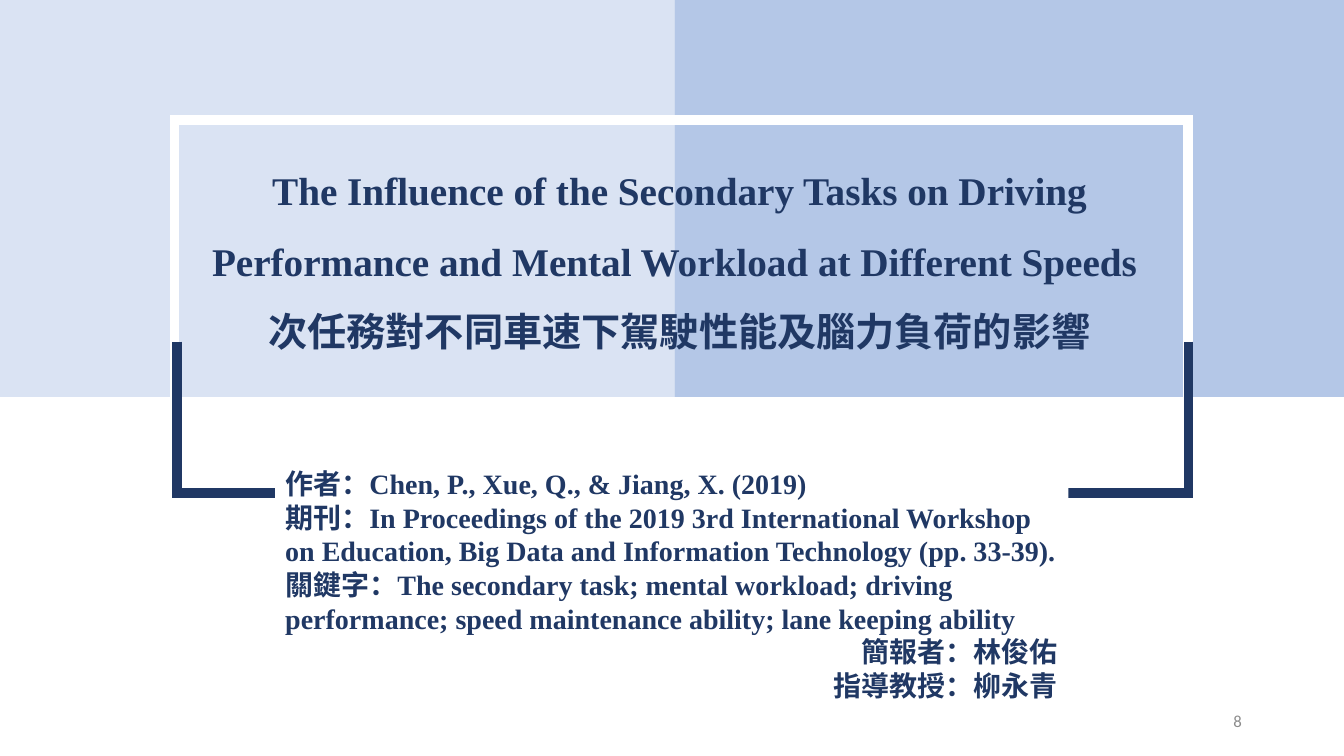
from dataclasses import dataclass
from typing import NamedTuple

from lxml.etree import SubElement
from pptx import Presentation
from pptx.dml.color import RGBColor as Rgb
from pptx.enum.shapes import MSO_SHAPE as Preset
from pptx.enum.text import MSO_ANCHOR as Anchor, PP_ALIGN as Align
from pptx.oxml.ns import qn
from pptx.util import Pt


@dataclass(frozen=True)
class Theme:
    navy: str = "203864"
    blue: str = "B4C7E7"
    pale: str = "DAE3F3"
    white: str = "FFFFFF"
    gray: str = "8C8C8C"
    serif: str = "Times New Roman"
    sans: str = "Calibri"
    title_size: int = 28
    detail_size: int = 20
    number_size: int = 12
    frame_width: int = 7


class Box(NamedTuple):
    left: float
    top: float
    width: float
    height: float


class Panel(NamedTuple):
    box: Box
    fill: str | None = None
    outline: str | None = None


class Line(NamedTuple):
    text: str
    align: Align = Align.LEFT


THEME = Theme()
HALF_WIDTH, BAND_HEIGHT = 481.7, 283.5
BRACKET_TOP, BRACKET_BOTTOM = 244, 352.4

PANELS = [
    Panel(Box(HALF_WIDTH, 0, HALF_WIDTH, BAND_HEIGHT), fill=THEME.blue),
    Panel(Box(0, 0, HALF_WIDTH, BAND_HEIGHT), fill=THEME.pale),
    Panel(Box(124.6, 85.7, 724.3, 283.7), outline=THEME.white),
]
BRACKET_SPANS = [(848.9, 506.2), (126.7, 468.7)]
DETAILS_BACKDROP = Panel(Box(196.6, 320.4, 566.6, 48.2), fill=THEME.white)

TITLE = [
    Line("The Influence of the Secondary Tasks on Driving Performance "
         "and Mental Workload at Different Speeds ", Align.CENTER),
    Line("次任務對不同車速下駕駛性能及腦力負荷的影響", Align.CENTER),
]
DETAILS = [
    Line("作者：Chen, P., Xue, Q., & Jiang, X. (2019)"),
    Line("期刊：In Proceedings of the 2019 3rd International Workshop on Education, "
         "Big Data and Information Technology (pp. 33-39)."),
    Line("關鍵字：The secondary task; mental workload; driving performance; "
         "speed maintenance ability; lane keeping ability"),
    Line("簡報者：林俊佑", Align.RIGHT),
    Line("指導教授：柳永青", Align.RIGHT),
]


def style_outline(shape, color: str) -> None:
    shape.line.color.rgb = Rgb.from_string(color)
    shape.line.width = Pt(THEME.frame_width)
    SubElement(shape.element.spPr.find(qn("a:ln")), qn("a:miter"), lim="800000")


def add_panel(slide, panel: Panel) -> None:
    shape = slide.shapes.add_shape(Preset.RECTANGLE, *map(Pt, panel.box))
    shape.shadow.inherit = False
    if panel.fill:
        shape.fill.solid()
        shape.fill.fore_color.rgb = Rgb.from_string(panel.fill)
    else:
        shape.fill.background()
    if panel.outline:
        style_outline(shape, panel.outline)
    else:
        shape.line.fill.background()


def add_bracket(slide, outer: float, inner: float) -> None:
    builder = slide.shapes.build_freeform(Pt(outer), Pt(BRACKET_TOP))
    corners = [(Pt(outer), Pt(BRACKET_BOTTOM)), (Pt(inner), Pt(BRACKET_BOTTOM))]
    builder.add_line_segments(corners, close=False)
    bracket = builder.convert_to_shape()
    bracket.shadow.inherit = False
    bracket.fill.background()
    style_outline(bracket, THEME.navy)


def add_text(slide, box: Box, lines: list[Line], *, size: int,
             font: str = THEME.serif, color: str = THEME.navy, bold: bool = True,
             spacing: float = 1.0, anchor: Anchor = Anchor.TOP) -> None:
    frame = slide.shapes.add_textbox(*map(Pt, box)).text_frame
    frame.word_wrap = True
    frame.vertical_anchor = anchor
    for index, line in enumerate(lines):
        paragraph = frame.add_paragraph() if index else frame.paragraphs[0]
        paragraph.alignment = line.align
        paragraph.line_spacing = spacing
        run = paragraph.add_run()
        run.text = line.text
        run.font.name = font
        run.font.size = Pt(size)
        run.font.bold = bold
        run.font.color.rgb = Rgb.from_string(color)


def main() -> None:
    deck = Presentation()
    deck.slide_width, deck.slide_height = Pt(960), Pt(540)
    slide = deck.slides.add_slide(deck.slide_layouts[6])

    for panel in PANELS:
        add_panel(slide, panel)
    for outer, inner in BRACKET_SPANS:
        add_bracket(slide, outer, inner)
    add_panel(slide, DETAILS_BACKDROP)

    add_text(slide, Box(131.8, 98.6, 707, 154), TITLE,
             size=THEME.title_size, spacing=1.5)
    add_text(slide, Box(196.6, 329.8, 566, 200.9), DETAILS, size=THEME.detail_size)
    add_text(slide, Box(678.2, 500.4, 216, 28.8), [Line("8", Align.RIGHT)],
             size=THEME.number_size, font=THEME.sans, color=THEME.gray,
             bold=False, anchor=Anchor.MIDDLE)
    deck.save("out.pptx")


if __name__ == "__main__":
    main()
